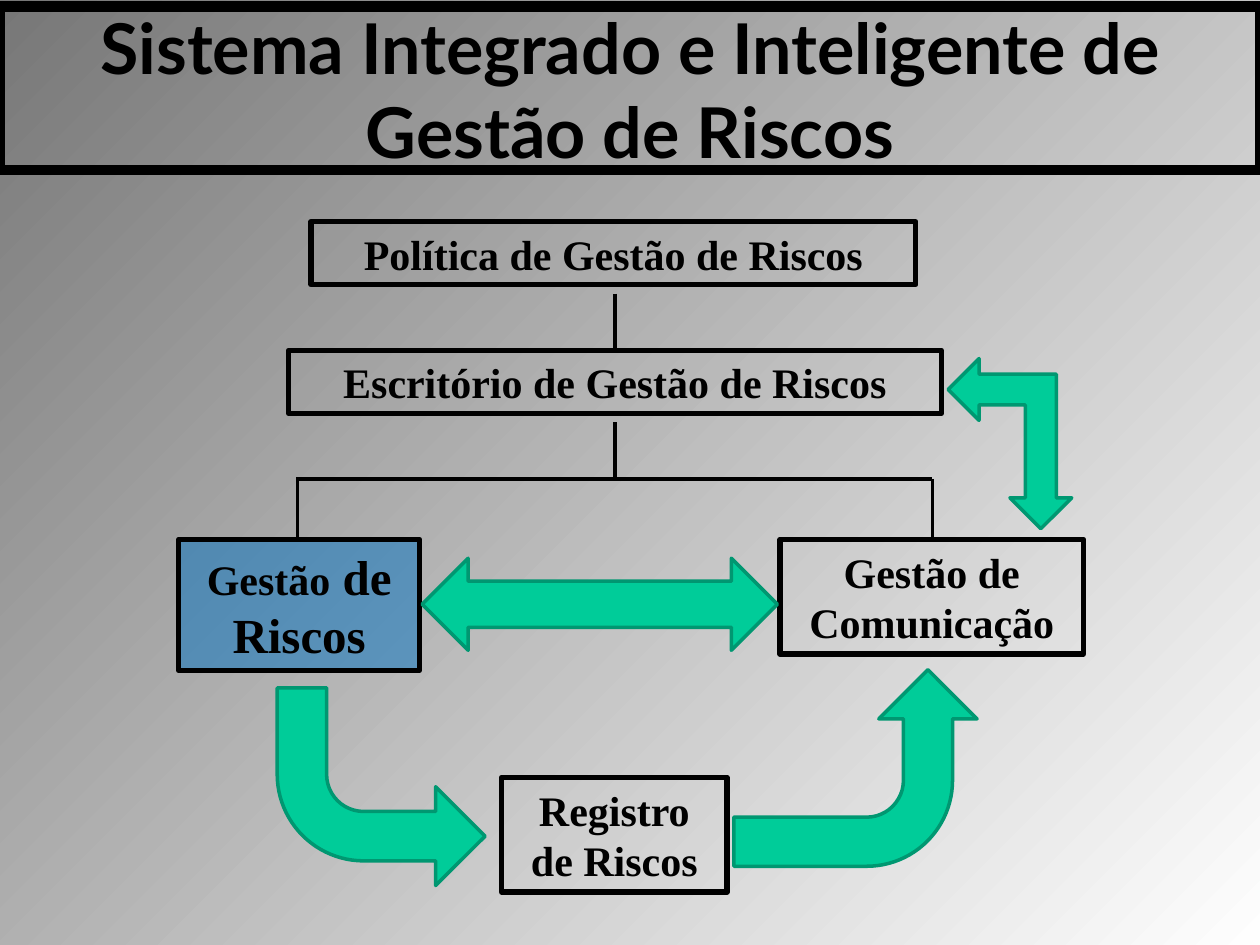
"""Builds the slide on the integrated risk management system."""
from lxml.etree import SubElement
from pptx import Presentation
from pptx.dml.color import RGBColor
from pptx.enum.shapes import MSO_CONNECTOR, MSO_SHAPE as Preset
from pptx.enum.text import MSO_ANCHOR, PP_ALIGN
from pptx.oxml.ns import qn
from pptx.util import Pt

COLORS = {
    "dark": "777777", "light": "FEFEFE", "ink": "000000",
    "focus": "0070C0", "arrow": "00CC99", "arrow_edge": "009771",
}


def rgb(name):
    return RGBColor.from_string(COLORS[name])


def add_part(preset, bounds, edge, edge_width, fill=None):
    part = slide.shapes.add_shape(preset, *map(Pt, bounds))
    part.shadow.inherit = False
    if fill:
        part.fill.solid()
        part.fill.fore_color.rgb = rgb(fill)
    else:
        part.fill.background()
    part.line.color.rgb = rgb(edge)
    part.line.width = Pt(edge_width)
    return part


deck = Presentation()
deck.slide_width, deck.slide_height = Pt(720), Pt(540)
slide = deck.slides.add_slide(deck.slide_layouts[6])

backdrop = slide.background.fill
backdrop.gradient()
backdrop.gradient_angle = 315
for stop, tone in zip(backdrop.gradient_stops, ("dark", "light")):
    stop.color.rgb = rgb(tone)

SERIF = "Times New Roman"
boxes = [
    ((177.8, 126.7, 345.6, 36), 3, SERIF, None, [[("Política de Gestão de Riscos", 24)]]),
    ((164.9, 200.2, 373, 36), 3, SERIF, None, [[("Escritório de Gestão de Riscos", 24)]]),
    ((286.6, 444.2, 128.9, 65.5), 3, SERIF, None, [[("Registro", 24)], [("de Riscos", 24)]]),
    ((102.2, 308.2, 137.5, 74.9), 3, SERIF, "focus",
     [[("Gestão", 24), (" de", 28)], [("Riscos", 28)]]),
    ((445.7, 308.2, 173.5, 65.5), 3, SERIF, None, [[("Gestão de", 24)], [("Comunicação", 24)]]),
    ((0, 3.6, 720, 93.6), 6, "Lato", None,
     [[("Sistema Integrado e Inteligente de Gestão de Riscos", 40)]]),
]
for bounds, edge_width, font, fill, lines in boxes:
    box = add_part(Preset.RECTANGLE, bounds, "ink", edge_width, fill)
    if fill:
        tint = box.element.spPr.find(qn("a:solidFill"))[0]
        SubElement(tint, qn("a:alpha"), val="50000")
    frame = box.text_frame
    frame.word_wrap = font != SERIF
    frame.vertical_anchor = MSO_ANCHOR.MIDDLE
    for index, line in enumerate(lines):
        paragraph = frame.add_paragraph() if index else frame.paragraphs[0]
        paragraph.alignment = PP_ALIGN.CENTER
        for words, size in line:
            run = paragraph.add_run()
            run.text = words
            run.font.name = font
            run.font.size = Pt(size)
            run.font.bold = True
            run.font.color.rgb = rgb("ink")

TRUNK, LEFT, RIGHT, BRANCH = 351.4, 169.9, 532.8, 273.6
branches = [
    (TRUNK, 167.8, TRUNK, 200.2),
    (TRUNK, 241.2, TRUNK, BRANCH),
    (LEFT - 0.7, BRANCH, RIGHT, BRANCH),
    (LEFT, BRANCH, LEFT, 306.7),
    (RIGHT, BRANCH, RIGHT, 306.7),
]
for ends in branches:
    branch = slide.shapes.add_connector(MSO_CONNECTOR.STRAIGHT, *map(Pt, ends))
    branch.line.color.rgb = rgb("ink")
    branch.line.width = Pt(2)
    SubElement(branch.element.spPr, qn("a:effectLst"))

flows = [
    (Preset.LEFT_RIGHT_ARROW, (241.2, 319, 203, 52.6), 0, False),
    (Preset.BENT_ARROW, (158.4, 393.1, 118.8, 113), 0, True),
    (Preset.BENT_ARROW, (432.7, 369.4, 112.3, 139), 270, True),
    (Preset.LEFT_UP_ARROW, (528.5, 218.2, 97.2, 70.6), 270, False),
]
for preset, bounds, turn, flipped in flows:
    flow = add_part(preset, bounds, "arrow_edge", 2, "arrow")
    flow.rotation = turn
    if flipped:
        flow.element.spPr.find(qn("a:xfrm")).set("flipV", "1")

deck.save("out.pptx")
